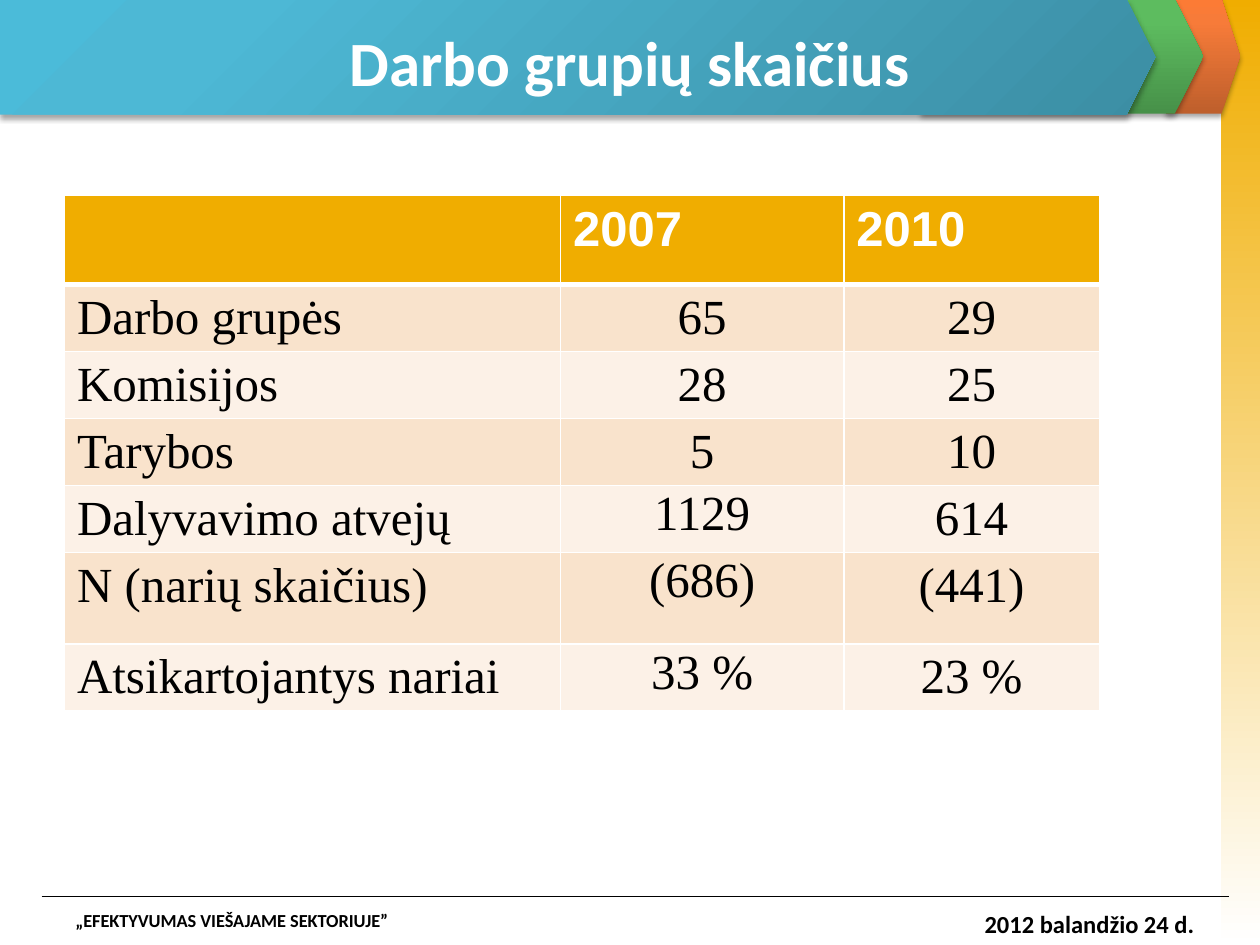
from pptx import Presentation
from pptx.dml.color import RGBColor
from pptx.enum import shapes, text
from pptx.oxml import parse_xml
from pptx.oxml.ns import nsdecls, qn
from pptx.util import Cm, Pt

COLORS = {
    "white": "FFFFFF", "black": "000000", "gold": "F0AD00",
    "band_dark": "F9E3CC", "band_light": "FCF1E7",
}
GRADIENTS = {
    "gold": [(0, "F0AD00"), (100, "FFFFFF")],
    "orange": [(0, "BE5F2C"), (80, "F77B39"), (100, "FC7B35")],
    "green": [(0, "479149"), (80, "5DBC5F"), (100, "5BBF5E")],
    "blue": [(0, "3C8EA4"), (80, "4DB8D5"), (100, "4BBBD9")],
}
CIRCLE = '<a:path path="circle"><a:fillToRect l="100000" t="100000"/></a:path>'
ROWS = [
    ("", "2007", "2010"),
    ("Darbo grupės", "65", "29"),
    ("Komisijos", "28", "25"),
    ("Tarybos", "5", "10"),
    ("Dalyvavimo atvejų", "1129", "614"),
    ("N (narių skaičius)", "(686)", "(441)"),
    ("Atsikartojantys nariai", "33 %", "23 %"),
]
COL_WIDTHS = [10, 5.71, 5.15]
ROW_HEIGHTS = [1.8, 1.35, 1.35, 1.35, 1.35, 1.84, 1.35]
FIRST_TIGHT_ROW = 4


def rgb(name):
    return RGBColor.from_string(COLORS[name])


def format_paragraph(p, size, font, color, bold, align):
    p.alignment = align
    for r in p.runs:
        r.font.size = Pt(size)
        r.font.name = font
        r.font.bold = bold
        r.font.color.rgb = rgb(color)


def add_gradient_shape(s, kind, box, gradient, direction, shadow=True):
    """Add a borderless shape; direction is the a:lin or a:path element."""
    sp = s.shapes.add_shape(kind, *map(Cm, box))
    sp.line.fill.background()
    sp.shadow.inherit = False
    sp.fill.gradient()
    stops = "".join(
        f'<a:gs pos="{pos * 1000}"><a:srgbClr val="{color}"/></a:gs>'
        for pos, color in GRADIENTS[gradient])
    props = sp._element.spPr
    props.replace(props.find(qn("a:gradFill")), parse_xml(
        f'<a:gradFill {nsdecls("a")} rotWithShape="1">'
        f'<a:gsLst>{stops}</a:gsLst>{direction}</a:gradFill>'))
    if shadow:
        props.find(qn("a:effectLst")).append(parse_xml(
            f'<a:outerShdw {nsdecls("a")} blurRad="{Pt(3.1)}" dist="{Pt(1.8)}" '
            'dir="5400000" rotWithShape="0"><a:srgbClr val="000000">'
            '<a:alpha val="35000"/></a:srgbClr></a:outerShdw>'))
    return sp


def add_arrow(s, box, gradient, direction):
    sp = add_gradient_shape(s, shapes.MSO_SHAPE.PENTAGON, box, gradient, direction)
    sp.adjustments[0] = 0.25


def add_rule(s, x1, x2, y):
    line = s.shapes.add_connector(
        shapes.MSO_CONNECTOR.STRAIGHT, Cm(x1), Cm(y), Cm(x2), Cm(y))
    line.line.color.rgb = rgb("black")
    line.line.width = Pt(0.75)
    line._element.spPr.append(parse_xml(f'<a:effectLst {nsdecls("a")}/>'))


def set_title(s, words):
    title = s.shapes.title
    s.shapes._spTree.append(title._element)  # in front of the banner
    title.left, title.top, title.width, title.height = map(
        Cm, (1.27, 0.36, 22.86, 1.75))
    tf = title.text_frame
    tf.text = words
    tf.vertical_anchor = text.MSO_ANCHOR.MIDDLE
    format_paragraph(tf.paragraphs[0], 36, "Calibri", "white", True,
                     text.PP_ALIGN.CENTER)


def add_footer(s, words, left, width, size, align):
    tf = s.shapes.add_textbox(Cm(left), Cm(18.21), Cm(width), Cm(0.84)).text_frame
    tf.word_wrap = True
    tf.text = words
    format_paragraph(tf.paragraphs[0], size, "Calibri", "black", True, align)


def set_borders(cell, bottom):
    widths = {"lnL": 1, "lnR": 1, "lnT": 1, "lnB": bottom}
    for i, (side, width) in enumerate(widths.items()):
        cell._tc.get_or_add_tcPr().insert(i, parse_xml(
            f'<a:{side} {nsdecls("a")} w="{Pt(width)}"><a:solidFill>'
            f'<a:srgbClr val="{COLORS["white"]}"/></a:solidFill></a:{side}>'))


def fill_cell(cell, words, row, col):
    header = row == 0
    cell.text = words
    cell.fill.solid()
    band = "band_dark" if row % 2 else "band_light"
    cell.fill.fore_color.rgb = rgb("gold" if header else band)
    set_borders(cell, 3 if header else 1)
    p = cell.text_frame.paragraphs[0]
    if header:
        format_paragraph(p, 28, "Arial", "white", True, text.PP_ALIGN.LEFT)
    else:
        align = text.PP_ALIGN.CENTER if col else text.PP_ALIGN.LEFT
        format_paragraph(p, 28, "Times New Roman", "black", False, align)
    if col == 1 and row >= FIRST_TIGHT_ROW:
        cell.margin_left = cell.margin_right = cell.margin_top = Cm(0.03)
        cell.margin_bottom = 0


def add_group_table(s):
    table = s.shapes.add_table(
        len(ROWS), len(COL_WIDTHS), Cm(1.3), Cm(3.94),
        Cm(sum(COL_WIDTHS)), Cm(sum(ROW_HEIGHTS))).table
    for column, width in zip(table.columns, COL_WIDTHS):
        column.width = Cm(width)
    for i, (values, height) in enumerate(zip(ROWS, ROW_HEIGHTS)):
        table.rows[i].height = Cm(height)
        for j, value in enumerate(values):
            fill_cell(table.cell(i, j), value, i, j)


def main():
    prs = Presentation()
    prs.slide_width, prs.slide_height = Cm(25.4), Cm(19.05)
    s = prs.slides.add_slide(prs.slide_layouts[5])

    down, up = (f'<a:lin ang="{deg * 60000}" scaled="0"/>' for deg in (90, 270))
    add_gradient_shape(s, shapes.MSO_SHAPE.RECTANGLE, (24.61, 0, 0.79, 19.05),
                       "gold", down, shadow=False)
    add_arrow(s, (23.5, -0.02, 1.5, 2.31), "orange", up)
    add_arrow(s, (18.57, -0.02, 5.69, 2.31), "green", up)
    add_rule(s, 0.84, 24.77, 18.08)
    add_arrow(s, (0, 0, 23.29, 2.31), "blue", CIRCLE)

    set_title(s, "Darbo grupių skaičius")
    add_group_table(s)
    add_footer(s, "„EFEKTYVUMAS VIEŠAJAME SEKTORIUJE”", 1.27, 15.24, 10.5,
               text.PP_ALIGN.LEFT)
    add_footer(s, "2012 balandžio 24 d.", 18.69, 5.64, 14, text.PP_ALIGN.RIGHT)
    prs.save("out.pptx")


if __name__ == "__main__":
    main()
